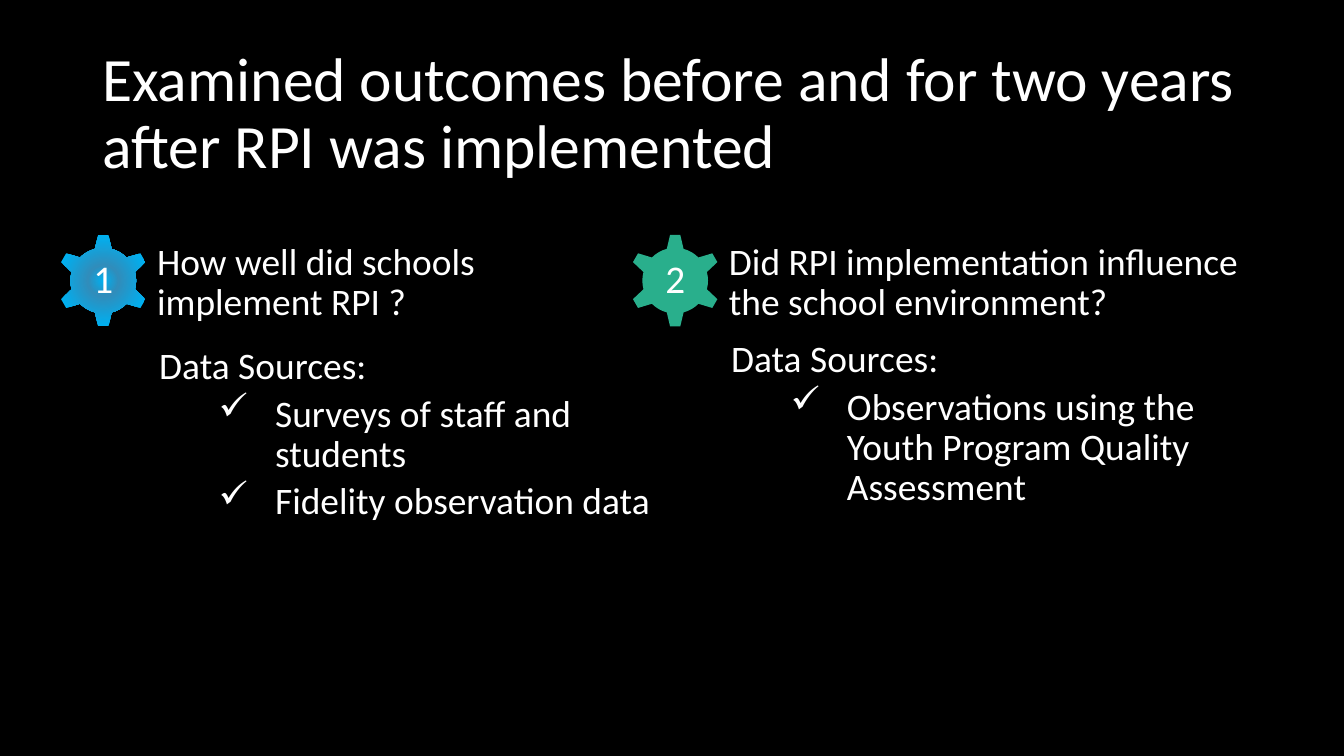
from lxml.etree import SubElement
from pptx import Presentation
from pptx.dml.color import RGBColor
from pptx.enum.shapes import MSO_SHAPE as Shape
from pptx.enum.text import MSO_ANCHOR as Anchor, PP_ALIGN as Align
from pptx.oxml.ns import qn
from pptx.util import Pt

TITLE = "Examined outcomes before and for two years after RPI was implemented"
SOURCES_LABEL = "Data Sources:"
QUESTIONS = [
    {"question": "How well did schools \vimplement RPI ?",
     "sources": ["Surveys of staff and students", "Fidelity observation data"],
     "label_gap": 17, "fill": "blue_gradient"},
    {"question": "Did RPI implementation influence the school environment?",
     "sources": ["Observations using the Youth Program Quality Assessment"],
     "label_gap": 12, "fill": "green"},
]

THEME = {
    "font": "Calibri", "background": "000000", "text": "FFFFFF",
    "green": "29AF8C",
    "blue_gradient": [(0, "00B0F0"), (23, "318DBB"), (68, "00B0F0"), (97, "00B0F0")],
    "title_size": 44, "body_size": 26.7, "number_size": 28, "line_spacing": 0.9,
}

SLIDE_SIZE = (960, 540)
TITLE_BOX = (66, 30, 828, 104.4)
COLUMN_LEFT, COLUMN_TOP, COLUMN_STEP, COLUMN_HEIGHT = 64.8, 170, 408.5, 322
INSET = 7.2
GEAR_LEFT, GEAR_TOP, GEAR_SIZE = 40.3, 167, 67
QUESTION_INDENT, LABEL_INDENT, SOURCE_INDENT, HANGING = 40.3, 41.8, 124.6, -40.3


def write(paragraph, text, size=THEME["body_size"], align=Align.LEFT,
          before=0, indent=0, hanging=0, bullet=None):
    properties = paragraph._p.get_or_add_pPr()
    properties.set("marL", str(Pt(indent)))
    properties.set("indent", str(Pt(hanging)))
    if bullet:
        SubElement(properties, qn("a:buChar"), char=bullet)
    paragraph.text = text
    paragraph.alignment = align
    paragraph.line_spacing = THEME["line_spacing"]
    paragraph.space_before = Pt(before)
    paragraph.font.name = THEME["font"]
    paragraph.font.size = Pt(size)
    paragraph.font.color.rgb = RGBColor.from_string(THEME["text"])


def add_text_frame(slide, box, anchor=Anchor.TOP):
    frame = slide.shapes.add_textbox(*map(Pt, box)).text_frame
    frame.word_wrap = True
    frame.vertical_anchor = anchor
    return frame


def fill_radial(shape, stops):
    """Fill the shape with a gradient running outwards from its centre."""
    shape.fill.gradient()
    gradient = shape._element.spPr.find(qn("a:gradFill"))
    for child in list(gradient):
        gradient.remove(child)
    stop_list = SubElement(gradient, qn("a:gsLst"))
    for position, color in stops:
        stop = SubElement(stop_list, qn("a:gs"), pos=str(position * 1000))
        SubElement(stop, qn("a:srgbClr"), val=color)
    circle = SubElement(gradient, qn("a:path"), path="circle")
    SubElement(circle, qn("a:fillToRect"), dict.fromkeys("ltrb", "50000"))


def add_gear(slide, left, number, fill):
    gear = slide.shapes.add_shape(
        Shape.GEAR_6, Pt(left), Pt(GEAR_TOP), Pt(GEAR_SIZE), Pt(GEAR_SIZE))
    gear.shadow.inherit = False
    gear.line.fill.background()
    if isinstance(fill, str):
        gear.fill.solid()
        gear.fill.fore_color.rgb = RGBColor.from_string(fill)
    else:
        fill_radial(gear, fill)
    gear.text_frame.vertical_anchor = Anchor.MIDDLE
    write(gear.text_frame.paragraphs[0], str(number),
          size=THEME["number_size"], align=Align.CENTER)


def add_question(slide, index, item):
    offset = index * COLUMN_STEP
    frame = add_text_frame(slide, (COLUMN_LEFT + offset, COLUMN_TOP,
                                   COLUMN_STEP + 2 * INSET, COLUMN_HEIGHT))
    write(frame.paragraphs[0], item["question"], indent=QUESTION_INDENT)
    write(frame.add_paragraph(), SOURCES_LABEL,
          before=item["label_gap"], indent=LABEL_INDENT)
    for source in item["sources"]:
        write(frame.add_paragraph(), source, before=5,
              indent=SOURCE_INDENT, hanging=HANGING, bullet="✓")
    add_gear(slide, GEAR_LEFT + offset, index + 1, THEME[item["fill"]])


def main():
    presentation = Presentation()
    presentation.slide_width, presentation.slide_height = map(Pt, SLIDE_SIZE)
    slide = presentation.slides.add_slide(presentation.slide_layouts[6])
    slide.background.fill.solid()
    slide.background.fill.fore_color.rgb = RGBColor.from_string(THEME["background"])

    title = add_text_frame(slide, TITLE_BOX, Anchor.MIDDLE)
    write(title.paragraphs[0], TITLE, size=THEME["title_size"])
    for index, item in enumerate(QUESTIONS):
        add_question(slide, index, item)
    presentation.save("out.pptx")


if __name__ == "__main__":
    main()
